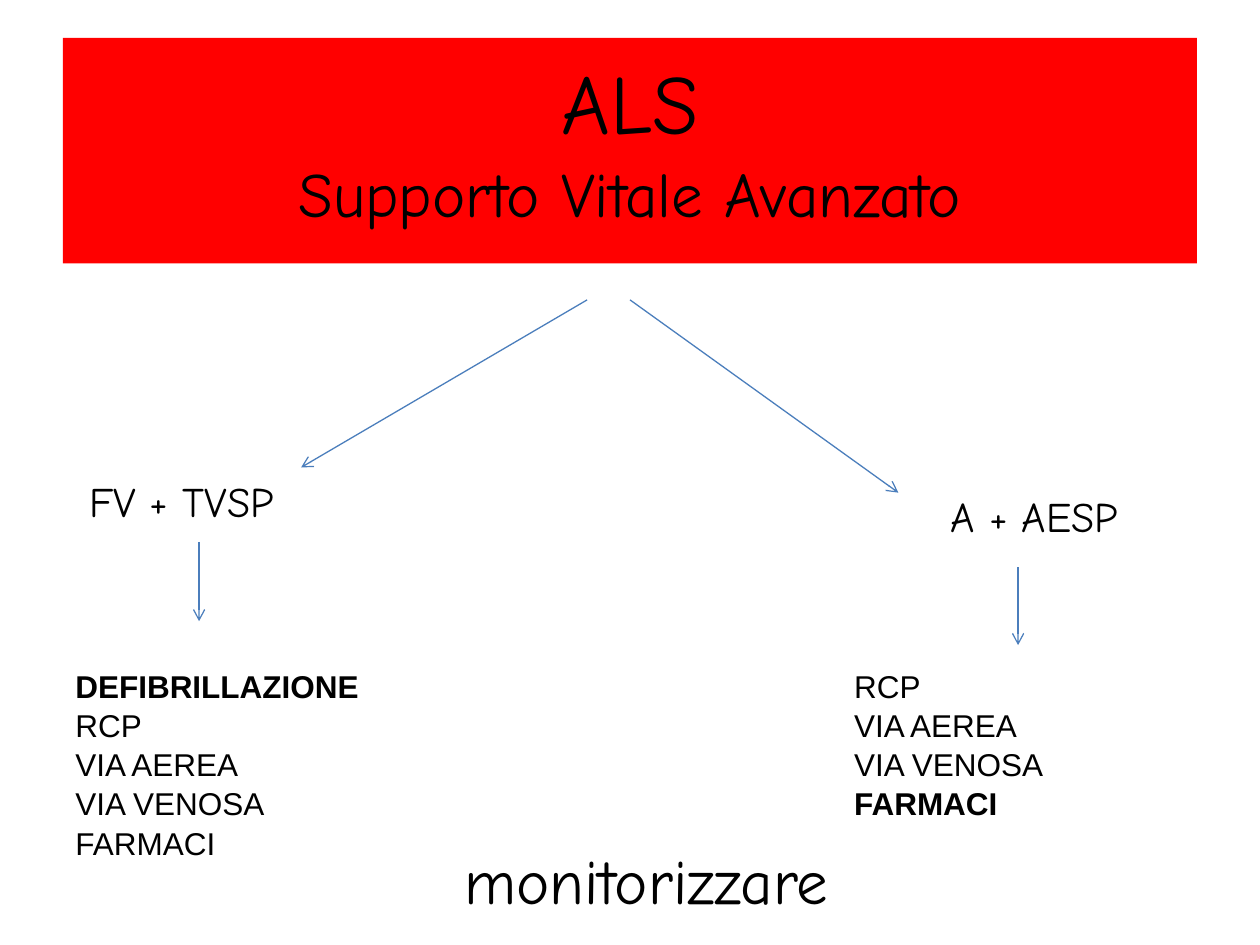
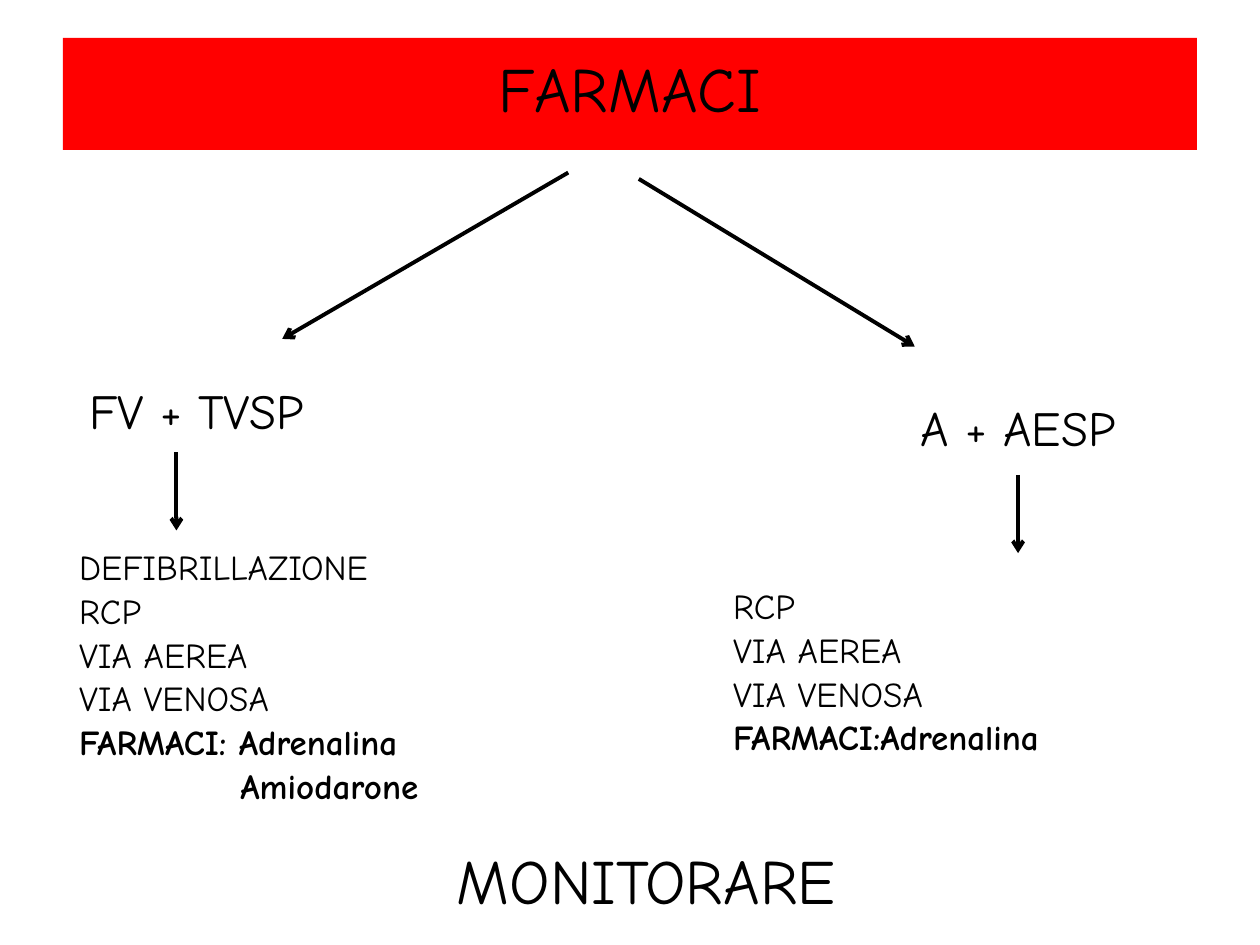
import pptx
import pptx.dml.color
import pptx.enum.shapes
import pptx.enum.text
import pptx.oxml.ns
import pptx.util
import lxml.etree

PX = 9144  # 100 px to the inch

RED = pptx.dml.color.RGBColor(0xFF, 0x00, 0x00)
BLUE = pptx.dml.color.RGBColor(0x4B, 0x7E, 0xBC)
BLACK = pptx.dml.color.RGBColor(0x00, 0x00, 0x00)

HAND_FONT = "Comic Neue"
PLAIN_FONT = "Arial"
LEFT = pptx.enum.text.PP_ALIGN.LEFT
CENTER = pptx.enum.text.PP_ALIGN.CENTER
LINE_SPACING = 1.04
BAND_LEFT, BAND_TOP, BAND_WIDTH = 50, 30, 900
CLOSING_BOX = (255, 661, 516, 70)
DRUG_INDENT = 128  # lines the second drug up under the first

# Text lines are (text, size, bold, indent)
SLIDES = [
    {
        "band_height": 179,
        "title": [("ALS", 48, False, 0), ("Supporto Vitale Avanzato", 36, False, 0)],
        "arrow_color": BLUE,
        "arrow_width": 0.75,
        "arrows": [(466, 238, 239, 371), (500, 238, 713, 391),
                   (158, 430, 158, 493), (808, 450, 808, 512)],
        "rhythm_size": 24,
        "rhythms": [("FV + TVSP", (61, 371, 194, 50), LEFT),
                    ("A + AESP", (724, 383, 194, 51), CENTER)],
        "step_font": PLAIN_FONT,
        "steps": [
            ((50, 523, 256, 160), [
                ("DEFIBRILLAZIONE", 18, True, 0), ("RCP", 18, False, 0),
                ("VIA AEREA", 18, False, 0), ("VIA VENOSA", 18, False, 0),
                ("FARMACI", 18, False, 0)]),
            ((668, 523, 239, 130), [
                ("RCP", 18, False, 0), ("VIA AEREA", 18, False, 0),
                ("VIA VENOSA", 18, False, 0), ("FARMACI", 18, True, 0)]),
        ],
        "closing": "monitorizzare",
    },
    {
        "band_height": 89,
        "title": [("FARMACI", 36, False, 0)],
        "arrow_color": BLACK,
        "arrow_width": 2.25,
        "arrows": [(451, 137, 224, 269), (507, 142, 726, 275),
                   (140, 359, 140, 421), (808, 377, 808, 439)],
        "rhythm_size": 28,
        "rhythms": [("FV + TVSP", (61, 295, 237, 57), LEFT),
                    ("A + AESP", (711, 309, 194, 57), CENTER)],
        "step_font": HAND_FONT,
        "steps": [
            ((53, 427, 447, 212), [
                ("DEFIBRILLAZIONE", 20, False, 0), ("RCP", 20, False, 0),
                ("VIA AEREA", 20, False, 0), ("VIA VENOSA", 20, False, 0),
                ("FARMACI: Adrenalina", 20, True, 0),
                ("Amiodarone", 20, True, DRUG_INDENT)]),
            ((572, 458, 413, 145), [
                ("RCP", 20, False, 0), ("VIA AEREA", 20, False, 0),
                ("VIA VENOSA", 20, False, 0), ("FARMACI:Adrenalina", 20, True, 0)]),
        ],
        "closing": "MONITORARE",
    },
]


def write_lines(shape, lines, font_name, alignment, top_inset=5):
    """Write one paragraph per line into a shape, starting at its top."""
    frame = shape.text_frame
    frame.word_wrap = True
    frame.vertical_anchor = pptx.enum.text.MSO_ANCHOR.TOP
    frame.margin_left = frame.margin_right = 10 * PX
    frame.margin_top = top_inset * PX
    frame.margin_bottom = 5 * PX
    for number, (text, size, bold, indent) in enumerate(lines):
        paragraph = frame.add_paragraph() if number else frame.paragraphs[0]
        paragraph.alignment = alignment
        paragraph.line_spacing = LINE_SPACING
        if indent:
            paragraph._p.get_or_add_pPr().set("marL", str(indent * PX))
        run = paragraph.add_run()
        run.text = text
        run.font.name = font_name
        run.font.size = pptx.util.Pt(size)
        run.font.bold = bold
        run.font.color.rgb = BLACK


def add_text(slide, box, lines, font_name, alignment):
    """Add a text box at box (left, top, width, height)."""
    shape = slide.shapes.add_textbox(*(length * PX for length in box))
    write_lines(shape, lines, font_name, alignment)


presentation = pptx.Presentation()
presentation.slide_width = 1000 * PX
presentation.slide_height = 750 * PX
blank_layout = presentation.slide_layouts[6]

for content in SLIDES:
    slide = presentation.slides.add_slide(blank_layout)

    # Red title band
    band = slide.shapes.add_shape(
        pptx.enum.shapes.MSO_SHAPE.RECTANGLE, BAND_LEFT * PX, BAND_TOP * PX,
        BAND_WIDTH * PX, content["band_height"] * PX)
    band.shadow.inherit = False
    band.fill.solid()
    band.fill.fore_color.rgb = RED
    band.line.fill.background()
    write_lines(band, content["title"], HAND_FONT, CENTER, top_inset=7)

    # Arrows from the title to the rhythms, and on to the steps
    for ends in content["arrows"]:
        arrow = slide.shapes.add_connector(
            pptx.enum.shapes.MSO_CONNECTOR.STRAIGHT, *(end * PX for end in ends))
        arrow.line.color.rgb = content["arrow_color"]
        arrow.line.width = pptx.util.Pt(content["arrow_width"])
        lxml.etree.SubElement(
            arrow.line._get_or_add_ln(), pptx.oxml.ns.qn("a:tailEnd"), type="arrow")
        lxml.etree.SubElement(
            arrow._element.spPr, pptx.oxml.ns.qn("a:effectLst"))

    # Rhythms
    for rhythm, box, alignment in content["rhythms"]:
        add_text(slide, box, [(rhythm, content["rhythm_size"], False, 0)],
                 HAND_FONT, alignment)

    # Treatment steps
    for box, lines in content["steps"]:
        add_text(slide, box, lines, content["step_font"], LEFT)

    # Closing word
    add_text(slide, CLOSING_BOX, [(content["closing"], 36, False, 0)],
             HAND_FONT, CENTER)

presentation.save("out.pptx")
